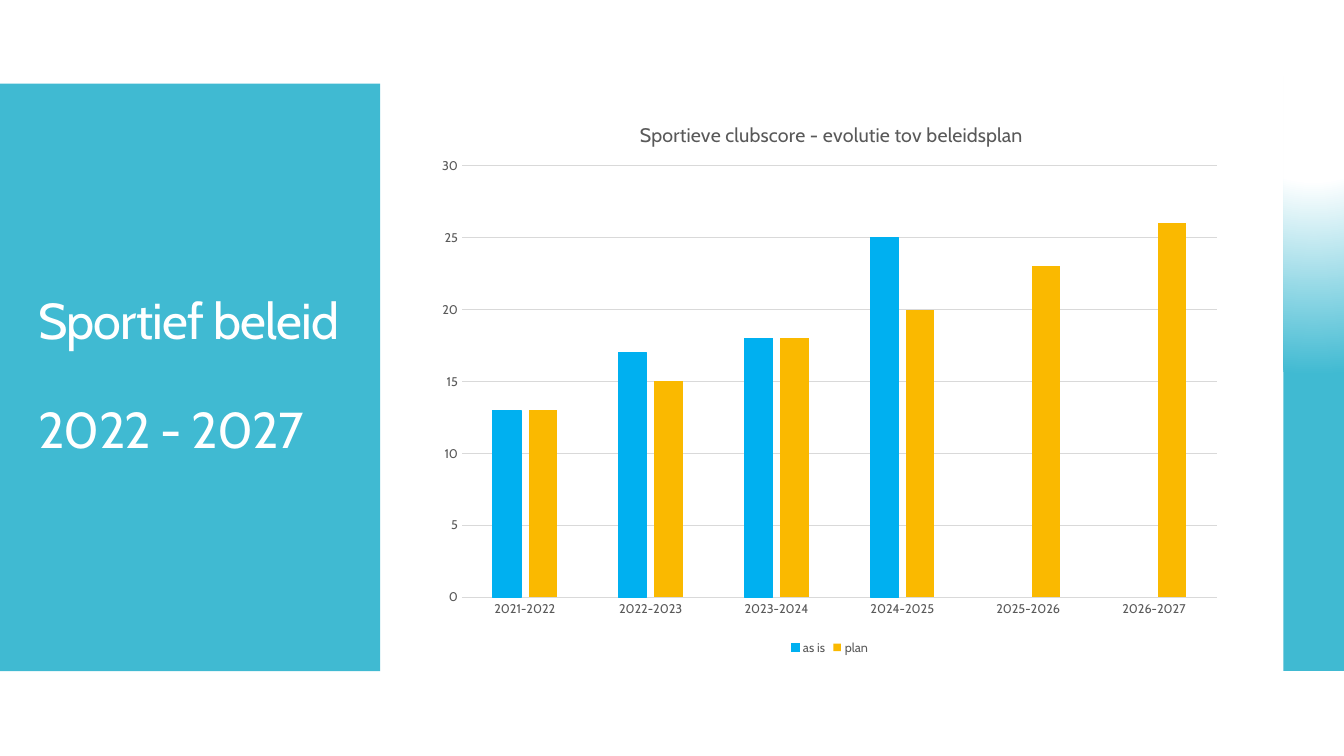
from lxml.etree import SubElement
from pptx import Presentation
from pptx.chart.data import CategoryChartData
from pptx.dml.color import RGBColor
from pptx.enum.chart import XL_CHART_TYPE, XL_LEGEND_POSITION, XL_TICK_MARK
from pptx.enum.shapes import MSO_SHAPE
from pptx.enum.text import MSO_ANCHOR, MSO_AUTO_SIZE, PP_ALIGN
from pptx.oxml import parse_xml
from pptx.oxml.ns import nsdecls, qn
from pptx.util import Inches, Pt

COLORS = {
    "teal": "40BAD2",
    "white": "FFFFFF",
    "as is": "00B0F0",
    "plan": "FAB900",
    "text": "595959",
    "grid": "D9D9D9",
}
FONT = "Cabin"


def style_font(font, size, color):
    font.name = FONT
    font.size = Pt(size)
    font.bold = False
    font.color.rgb = RGBColor.from_string(COLORS[color])


def manual_layout(parent, **fractions):
    """Place a chart part by fractions of the chart's size."""
    layout = parent.get_or_add_layout() if hasattr(parent, "get_or_add_layout") else parent.find(qn("c:layout"))
    if layout is None:
        layout = parent.makeelement(qn("c:layout"), {})
        parent.insert(1 if parent.tag == qn("c:title") else 0, layout)
    for child in list(layout):
        layout.remove(child)
    manual = SubElement(layout, qn("c:manualLayout"))
    if "w" in fractions:
        SubElement(manual, qn("c:layoutTarget")).set("val", "inner")
    for mode in ("xMode", "yMode"):
        SubElement(manual, qn(f"c:{mode}")).set("val", "edge")
    for name, value in fractions.items():
        SubElement(manual, qn(f"c:{name}")).set("val", str(value))


presentation = Presentation()
presentation.slide_width = Inches(13.33)
presentation.slide_height = Inches(7.5)
slide = presentation.slides.add_slide(presentation.slide_layouts[5])

# Side panels
panels = []
for left, top, width, height in [(0, 0.83, 3.77, 5.83), (12.73, 0.76, 0.6, 5.9)]:
    panel = slide.shapes.add_shape(
        MSO_SHAPE.RECTANGLE, Inches(left), Inches(top), Inches(width), Inches(height))
    panel.shadow.inherit = False
    panel.fill.solid()
    panel.fill.fore_color.rgb = RGBColor.from_string(COLORS["teal"])
    panel.line.fill.background()
    panels.append(panel)

# Circular fade on the right panel
stops = "".join(
    f'<a:gs pos="{position * 1000}"><a:srgbClr val="{COLORS[color]}"/></a:gs>'
    for position, color in [(0, "white"), (35, "white"), (100, "teal")])
fade = parse_xml(
    f'<a:gradFill {nsdecls("a")} rotWithShape="1"><a:gsLst>{stops}</a:gsLst>'
    '<a:path path="circle"><a:fillToRect l="50000" t="-80000" r="50000" b="180000"/>'
    '</a:path></a:gradFill>')
properties = panels[1].element.spPr
properties.replace(properties.find(qn("a:solidFill")), fade)

# Title, in front of the left panel
title = slide.shapes.title
title.left, title.top = Inches(0.28), Inches(1.23)
title.width, title.height = Inches(3.22), Inches(5.03)
slide.shapes._spTree.append(title.element)
text_frame = title.text_frame
text_frame.word_wrap = True
text_frame.auto_size = MSO_AUTO_SIZE.NONE
text_frame.vertical_anchor = MSO_ANCHOR.MIDDLE
for index, line in enumerate(["Sportief beleid", "2022 - 2027"]):
    paragraph = text_frame.add_paragraph() if index else text_frame.paragraphs[0]
    paragraph.alignment = PP_ALIGN.LEFT
    paragraph.line_spacing = 0.9
    paragraph.space_before = Pt(39 * index)
    run = paragraph.add_run()
    run.text = line
    style_font(run.font, 36, "white")
    run.font._element.set("spc", "-60")

# Club score chart
chart_data = CategoryChartData()
chart_data.categories = [f"{year}-{year + 1}" for year in range(2021, 2027)]
chart_data.add_series("as is", [13, 17, 18, 25, None, None])
chart_data.add_series("plan", [13, 15, 18, 20, 23, 26])
chart = slide.shapes.add_chart(
    XL_CHART_TYPE.COLUMN_CLUSTERED, Inches(4.23), Inches(0.94),
    Inches(8), Inches(5.6), chart_data).chart
style_font(chart.font, 10, "text")

run = chart.chart_title.text_frame.paragraphs[0].add_run()
run.text = "Sportieve clubscore - evolutie tov beleidsplan"
style_font(run.font, 14, "text")
chart.chart_title.include_in_layout = False
manual_layout(chart.chart_title._element, x=0.26, y=0.04)

# Columns
plot = chart.plots[0]
plot.gap_width = 219
plot.overlap = -27
plot.vary_by_categories = False
for series in plot.series:
    color = RGBColor.from_string(COLORS[series.name])
    series.format.fill.solid()
    series.format.fill.fore_color.rgb = color
    series.invert_if_negative = False
    if series.name == "as is":
        series.format.line.color.rgb = color
        series.format.line.width = Pt(0.75)
manual_layout(chart._chartSpace.chart.plotArea, x=0.044, y=0.126, w=0.936, h=0.764)

# Axes
for axis in (chart.category_axis, chart.value_axis):
    axis.major_tick_mark = XL_TICK_MARK.NONE
    axis.minor_tick_mark = XL_TICK_MARK.NONE
    style_font(axis.tick_labels.font, 9, "text")
value_axis = chart.value_axis
value_axis.minimum_scale, value_axis.maximum_scale = 0, 30
value_axis.major_unit = 5
value_axis.format.line.fill.background()
for line in (chart.category_axis.format.line, value_axis.major_gridlines.format.line):
    line.color.rgb = RGBColor.from_string(COLORS["grid"])
    line.width = Pt(0.75)

# Legend
chart.has_legend = True
chart.legend.position = XL_LEGEND_POSITION.BOTTOM
chart.legend.include_in_layout = False
style_font(chart.legend.font, 9, "text")

presentation.save("out.pptx")
